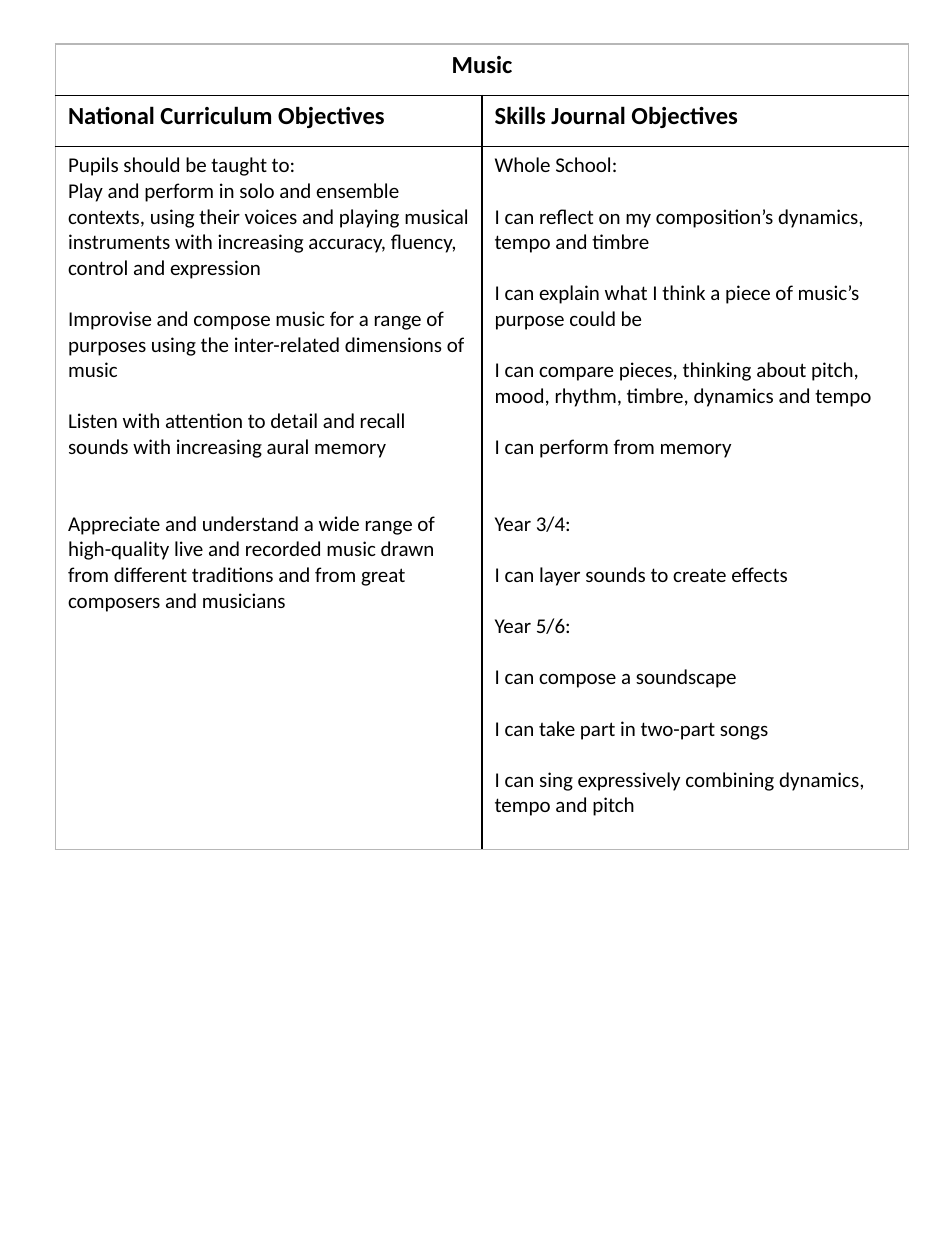
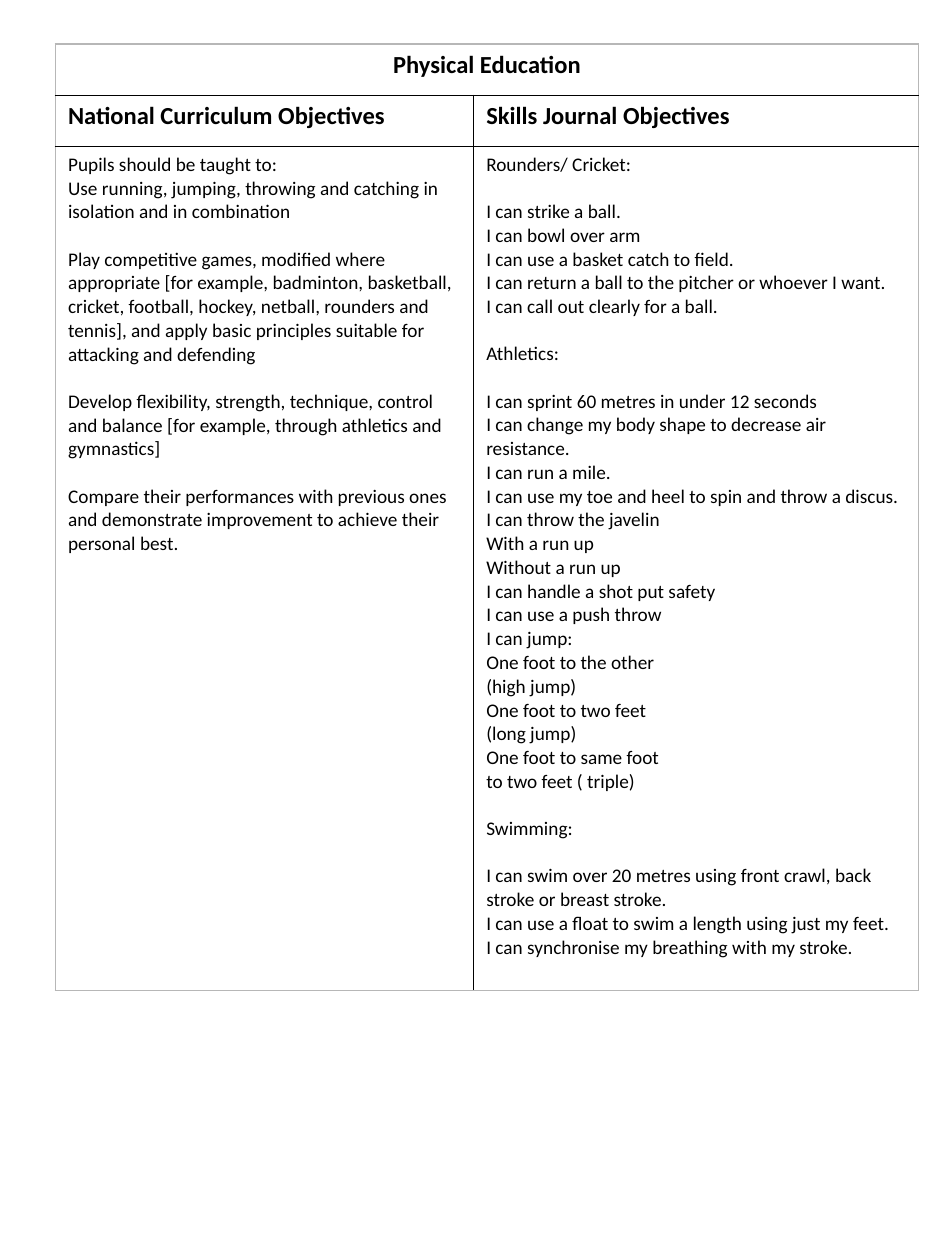
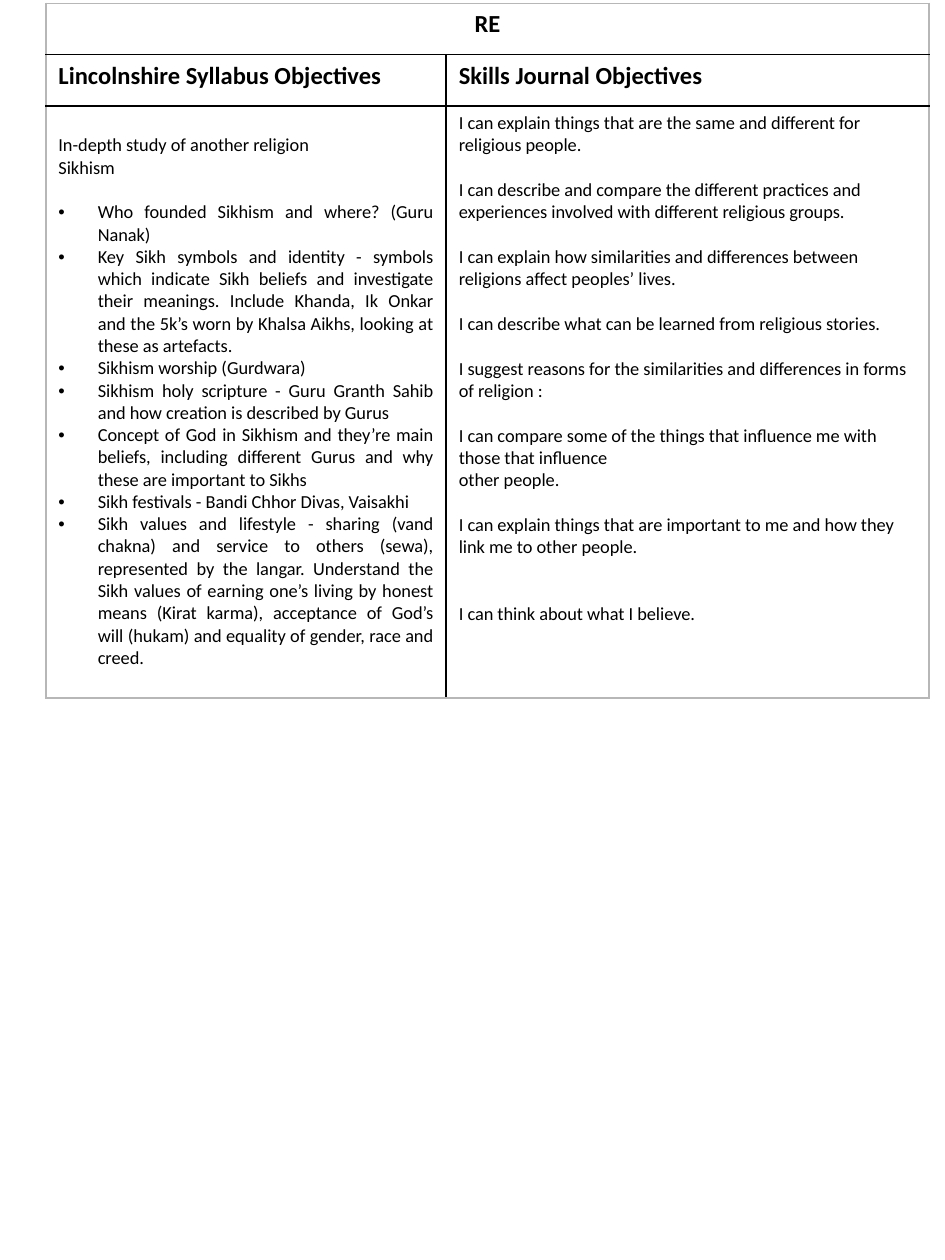
from lxml import etree
from pptx import Presentation
from pptx.dml.color import RGBColor
from pptx.enum.text import PP_ALIGN
from pptx.oxml.ns import qn
from pptx.util import Pt

CENTER, JUSTIFY, LEFT = PP_ALIGN.CENTER, PP_ALIGN.JUSTIFY, PP_ALIGN.LEFT
FONT = "Calibri"
INK, PAPER, FRAME = "000000", "FFFFFF", "B7B7B7"
HEADING_SIZE = 14
HEADING_HEIGHT = 29.3
LINE_FACTOR = 1.22
CELL_MARGIN = 3.6
BULLET_INDENT = 22.5
SKILLS = "Skills Journal Objectives"
NATIONAL = "National Curriculum Objectives"

subjects = [
    {
        "title": "Music",
        "headings": [NATIONAL, SKILLS],
        "corner": (31.7, 25.2),
        "widths": (243.8, 243.8),
        "body_height": 401.7,
        "size": 12,
        "objectives": [
            [
                (0, ["Pupils should be taught to:",
                     "Play and perform in solo and ensemble contexts, using their voices and playing musical "
                     "instruments with increasing accuracy, fluency, control and expression"]),
                (1, ["Improvise and compose music for a range of purposes using the inter-related "
                     "dimensions of music"]),
                (1, ["Listen with attention to detail and recall sounds with increasing aural memory"]),
                (2, ["Appreciate and understand a wide range of high-quality live and recorded music drawn "
                     "from different traditions and from great composers and musicians"]),
            ],
            [
                (0, ["Whole School:"]),
                (1, ["I can reflect on my composition’s dynamics, tempo and timbre"]),
                (1, ["I can explain what I think a piece of music’s purpose could be"]),
                (1, ["I can compare pieces, thinking about pitch, mood, rhythm, timbre, dynamics and tempo"]),
                (1, ["I can perform from memory"]),
                (2, ["Year 3/4:"]),
                (1, ["I can layer sounds to create effects"]),
                (1, ["Year 5/6:"]),
                (1, ["I can compose a soundscape"]),
                (1, ["I can take part in two-part songs"]),
                (1, ["I can sing expressively combining dynamics, tempo and pitch"]),
            ],
        ],
    },
    {
        "title": "Physical Education",
        "headings": [NATIONAL, SKILLS],
        "corner": (31.7, 25.2),
        "widths": (239, 254.2),
        "body_height": 482.3,
        "size": 11,
        "objectives": [
            [
                (0, ["Pupils should be taught to:",
                     "Use running, jumping, throwing and catching in isolation and in combination"]),
                (1, ["Play competitive games, modified where appropriate [for example, badminton, basketball, "
                     "cricket, football, hockey, netball, rounders and tennis], and apply basic principles "
                     "suitable for attacking and defending"]),
                (1, ["Develop flexibility, strength, technique, control and balance [for example, through "
                     "athletics and gymnastics]"]),
                (1, ["Compare their performances with previous ones and demonstrate improvement to achieve "
                     "their personal best."]),
            ],
            [
                (0, ["Rounders/ Cricket:"]),
                (1, ["I can strike a ball.",
                     "I can bowl over arm",
                     "I can use a basket catch to field.",
                     "I can return a ball to the pitcher or whoever I want.",
                     "I can call out clearly for a ball."]),
                (1, ["Athletics:"]),
                (1, ["I can sprint 60 metres in under 12 seconds",
                     "I can change my body shape to decrease air resistance.",
                     "I can run a mile.",
                     "I can use my toe and heel to spin and throw a discus.",
                     "I can throw the javelin",
                     "With a run up",
                     "Without a run up",
                     "I can handle a shot put safety",
                     "I can use a push throw",
                     "I can jump:",
                     "One foot to the other",
                     "(high jump)",
                     "One foot to two feet",
                     "(long jump)",
                     "One foot to same foot",
                     "to two feet ( triple)"]),
                (1, ["Swimming:"]),
                (1, ["I can swim over 20 metres using front crawl, back stroke or breast stroke.",
                     "I can use a float to swim a length using just my feet.",
                     "I can synchronise my breathing with my stroke."]),
            ],
        ],
    },
    {
        "title": "RE",
        "headings": ["Lincolnshire Syllabus Objectives", SKILLS],
        "corner": (26.2, 1.9),
        "widths": (228.8, 275.9),
        "body_height": 338.3,
        "size": 10.5,
        "objectives": [
            [
                (1, ["In-depth study of another religion", "Sikhism"]),
                (1, ["•Who founded Sikhism and where? (Guru Nanak)",
                     "•Key Sikh symbols and identity - symbols which indicate Sikh beliefs and investigate "
                     "their meanings. Include Khanda, Ik Onkar and the 5k’s worn by Khalsa Aikhs, looking at "
                     "these as artefacts.",
                     "•Sikhism worship (Gurdwara)",
                     "•Sikhism holy scripture - Guru Granth Sahib and how creation is described by Gurus",
                     "•Concept of God in Sikhism and they’re main beliefs, including different Gurus and why "
                     "these are important to Sikhs",
                     "•Sikh festivals - Bandi Chhor Divas, Vaisakhi",
                     "•Sikh values and lifestyle - sharing (vand chakna) and service to others (sewa), "
                     "represented by the langar. Understand the Sikh values of earning one’s living by honest "
                     "means (Kirat karma), acceptance of God’s will (hukam) and equality of gender, race and "
                     "creed."]),
            ],
            [
                (0, ["I can explain things that are the same and different for religious people."]),
                (1, ["I can describe and compare the different practices and experiences involved with "
                     "different religious groups."]),
                (1, ["I can explain how similarities and differences between religions affect peoples’ lives."]),
                (1, ["I can describe what can be learned from religious stories."]),
                (1, ["I suggest reasons for the similarities and differences in forms of religion :"]),
                (1, ["I can compare some of the things that influence me with those that influence",
                     "other people."]),
                (1, ["I can explain things that are important to me and how they link me to other people."]),
                (2, ["I can think about what I believe."]),
            ],
        ],
    },
]


def color(hex_string):
    return RGBColor.from_string(hex_string)


def write(paragraph, text, size, bold, align=LEFT):
    paragraph.alignment = align
    run = paragraph.add_run()
    run.text = text
    run.font.name = FONT
    run.font.size = Pt(size)
    run.font.bold = bold
    run.font.color.rgb = color(INK)


prs = Presentation()
prs.slide_width, prs.slide_height = Pt(540), Pt(720)

for subject in subjects:
    slide = prs.slides.add_slide(prs.slide_layouts[6])
    heights = (HEADING_HEIGHT, HEADING_HEIGHT, subject["body_height"])
    left, top = subject["corner"]
    grid = slide.shapes.add_table(3, 2, Pt(left), Pt(top),
                                  Pt(sum(subject["widths"])), Pt(sum(heights))).table
    grid.first_row = grid.horz_banding = False
    for column, width in zip(grid.columns, subject["widths"]):
        column.width = Pt(width)
    for row, height in zip(grid.rows, heights):
        row.height = Pt(height)

    for r in range(3):
        for c in range(2):
            cell = grid.cell(r, c)
            edges = {
                "a:lnL": FRAME if c == 0 or r == 0 else INK,
                "a:lnR": FRAME if c == 1 or r == 0 else INK,
                "a:lnT": FRAME if r == 0 else INK,
                "a:lnB": FRAME if r == 2 else INK,
            }
            properties = cell._tc.get_or_add_tcPr()
            for tag, edge_color in edges.items():
                edge = etree.SubElement(properties, qn(tag), w=str(Pt(1)))
                edge_fill = etree.SubElement(edge, qn("a:solidFill"))
                etree.SubElement(edge_fill, qn("a:srgbClr"), val=edge_color)
            cell.fill.solid()
            cell.fill.fore_color.rgb = color(PAPER)

    grid.cell(0, 0).merge(grid.cell(0, 1))
    write(grid.cell(0, 0).text_frame.paragraphs[0], subject["title"], HEADING_SIZE, True, CENTER)

    size = subject["size"]
    for c, heading in enumerate(subject["headings"]):
        write(grid.cell(1, c).text_frame.paragraphs[0], heading, HEADING_SIZE, True)
        body = grid.cell(2, c)
        groups = subject["objectives"][c]
        body.margin_top = Pt(CELL_MARGIN + groups[0][0] * size * LINE_FACTOR)
        for g, (gap, objectives) in enumerate(groups):
            for i, objective in enumerate(objectives):
                first = g == 0 and i == 0
                paragraph = body.text_frame.paragraphs[0] if first else body.text_frame.add_paragraph()
                if g > 0 and i == 0:
                    paragraph.space_before = Pt(gap * size * LINE_FACTOR)
                bulleted = objective.startswith("•")
                write(paragraph, objective.lstrip("•"), size, False, JUSTIFY if bulleted else LEFT)
                if bulleted:
                    layout = paragraph._p.get_or_add_pPr()
                    layout.set("marL", str(Pt(BULLET_INDENT)))
                    layout.set("indent", str(-Pt(BULLET_INDENT)))
                    etree.SubElement(layout, qn("a:buFont"), typeface="Arial")
                    etree.SubElement(layout, qn("a:buChar"), char="•")

prs.save("out.pptx")
